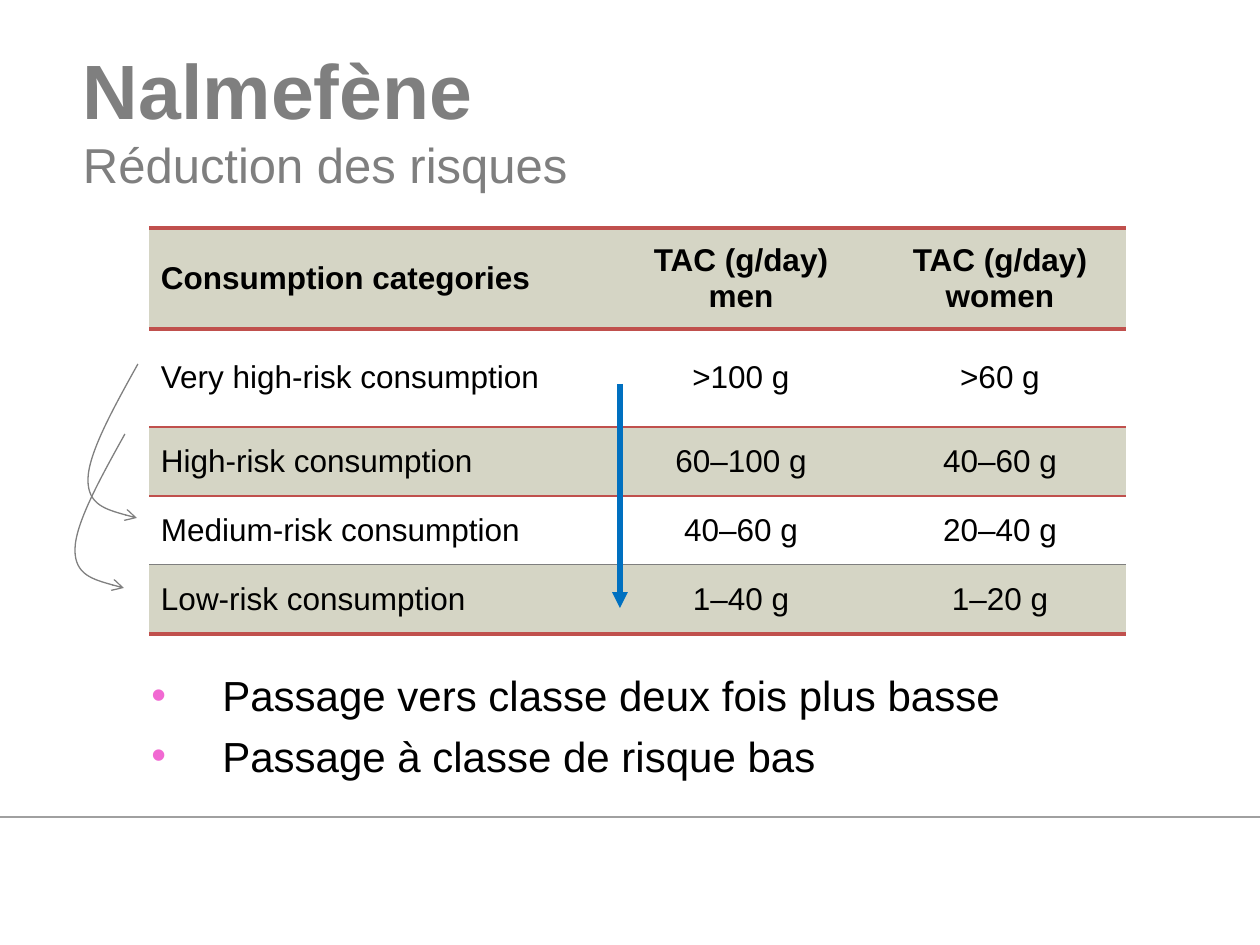
from lxml.etree import SubElement
from pptx import Presentation
from pptx.dml.color import RGBColor
from pptx.enum.shapes import MSO_CONNECTOR as Connector, MSO_SHAPE as Shape
from pptx.enum.text import MSO_ANCHOR as Anchor, PP_ALIGN as Align
from pptx.oxml.ns import qn
from pptx.util import Emu, Pt

COLORS = {
    "title": "7F7F7F", "text": "000000", "band": "D5D5C5", "rule": "C0504D",
    "thin_rule": "7F7F7F", "curve": "808080", "arrow": "0070C0",
    "bullet": "F169D2", "footer": "A0A0A0",
}
FONT = "Arial"
ROWS = [
    ("Consumption categories", "TAC (g/day) men", "TAC (g/day) women"),
    ("Very high-risk consumption", ">100 g", ">60 g"),
    ("High-risk consumption", "60–100 g", "40–60 g"),
    ("Medium-risk consumption", "40–60 g", "20–40 g"),
    ("Low-risk consumption", "1–40 g", "1–20 g"),
]
COLUMN_WIDTHS = [459, 266, 252]
ROW_HEIGHTS = [101, 98, 69, 69, 69]
RULES = [("rule", 2.25), ("rule", 2.25), ("rule", 1), ("rule", 1),
         ("thin_rule", 0.5), ("rule", 2.25)]
BULLETS = ["Passage vers classe deux fois plus basse", "Passage à classe de risque bas"]
CURVE = [(-25, 45), (-50, 90), (-50, 116), (-50, 141), (-25, 148), (-1, 154)]


def px(value):
    """Turn slide pixels into EMU."""
    return Emu(round(value * 914400 / 126))


def color(name):
    """Look up a named colour."""
    return RGBColor.from_string(COLORS[name])


def set_format(target, **values):
    """Set each given attribute on the target."""
    for name, value in values.items():
        setattr(target, name, value)


def set_font(paragraph, size, color_name, bold=False):
    """Style all the text of a paragraph."""
    set_format(paragraph.font, name=FONT, size=Pt(size), bold=bold)
    paragraph.font.color.rgb = color(color_name)


def set_line(shape, color_name, width, tail=None):
    """Style an outline, with an arrowhead at its end if asked."""
    shape.line.color.rgb = color(color_name)
    shape.line.width = Pt(width)
    properties = shape._element.spPr
    if tail:
        SubElement(properties.find(qn("a:ln")), qn("a:tailEnd"), type=tail)


def add_text_frame(slide, box, **values):
    """Add a wrapping text box and return its frame."""
    frame = slide.shapes.add_textbox(*map(px, box)).text_frame
    set_format(frame, word_wrap=True, **values)
    return frame


def add_title(slide, box):
    """Place the title above its subtitle."""
    frame = add_text_frame(slide, box, vertical_anchor=Anchor.MIDDLE, margin_left=0,
                           margin_right=0, margin_top=0, margin_bottom=0)
    title, subtitle = frame.paragraphs[0], frame.add_paragraph()
    title.text, subtitle.text = "Nalmefène", "Réduction des risques"
    set_font(title, 44, "title", bold=True)
    set_font(subtitle, 28, "title")


def set_borders(cell, top, bottom):
    """Rule a cell above and below, leaving its sides open."""
    properties = cell._tc.get_or_add_tcPr()
    for side, rule in (("L", None), ("R", None), ("T", top), ("B", bottom)):
        width = Pt(rule[1]) if rule else 0
        line = SubElement(properties, qn(f"a:ln{side}"), w=str(int(width)))
        if rule:
            fill = SubElement(line, qn("a:solidFill"))
            SubElement(fill, qn("a:srgbClr"), val=COLORS[rule[0]])
        else:
            SubElement(line, qn("a:noFill"))


def add_risk_table(slide, left, top):
    """Place the table of consumption categories."""
    box = (left, top, sum(COLUMN_WIDTHS), sum(ROW_HEIGHTS))
    table = slide.shapes.add_table(len(ROWS), len(COLUMN_WIDTHS), *map(px, box)).table
    set_format(table, first_row=False, horz_banding=False)
    for column, width in zip(table.columns, COLUMN_WIDTHS):
        column.width = px(width)
    for row_index, texts in enumerate(ROWS):
        table.rows[row_index].height = px(ROW_HEIGHTS[row_index])
        for column_index, text in enumerate(texts):
            cell = table.cell(row_index, column_index)
            set_borders(cell, RULES[row_index], RULES[row_index + 1])
            if row_index % 2 == 0:
                cell.fill.solid()
                cell.fill.fore_color.rgb = color("band")
            else:
                cell.fill.background()
            set_format(cell, text=text, vertical_anchor=Anchor.MIDDLE, margin_left=px(12),
                       margin_right=px(12), margin_top=px(9), margin_bottom=px(9))
            paragraph = cell.text_frame.paragraphs[0]
            paragraph.alignment = Align.CENTER if column_index else Align.LEFT
            set_font(paragraph, 18, "text", bold=row_index == 0)


def add_curved_arrow(slide, left, top):
    """Draw a curve that drops two classes from its starting point."""
    builder = slide.shapes.build_freeform(px(left), px(top), scale=1.0)
    builder.add_line_segments([(px(left + x), px(top + y)) for x, y in CURVE], close=False)
    shape = builder.convert_to_shape()
    outline = shape._element.find(".//" + qn("a:path"))
    segments = outline.findall(qn("a:lnTo"))
    for start in range(0, len(segments), 3):
        curve = SubElement(outline, qn("a:cubicBezTo"))
        for segment in segments[start:start + 3]:
            curve.append(segment[0])
            outline.remove(segment)
    shape.fill.background()
    set_line(shape, "curve", 0.75, tail="arrow")
    shape.shadow.inherit = False


def add_down_arrow(slide, x, top, bottom):
    """Draw the thick straight arrow over the table."""
    arrow = slide.shapes.add_connector(Connector.STRAIGHT, *map(px, (x, top, x, bottom)))
    set_line(arrow, "arrow", 3, tail="triangle")
    SubElement(arrow._element.spPr, qn("a:effectLst"))


def add_bullets(slide, box):
    """Place the bulleted list."""
    frame = add_text_frame(slide, box, margin_top=px(12))
    for index, text in enumerate(BULLETS):
        paragraph = frame.add_paragraph() if index else frame.paragraphs[0]
        paragraph.text = text
        properties = paragraph._p.get_or_add_pPr()
        set_format(paragraph, space_before=Pt(5.5 if index else 0))
        properties.set("marL", str(px(71)))
        properties.set("indent", str(px(-71)))
        bullet_color = SubElement(properties, qn("a:buClr"))
        SubElement(bullet_color, qn("a:srgbClr"), val=COLORS["bullet"])
        SubElement(properties, qn("a:buFont"), typeface=FONT)
        SubElement(properties, qn("a:buChar"), char="•")
        set_font(paragraph, 24, "text")


def add_footer(slide, box):
    """Outline the footer band."""
    band = slide.shapes.add_shape(Shape.RECTANGLE, *map(px, box))
    band.fill.background()
    set_line(band, "footer", 0.75)
    band.shadow.inherit = False


def main():
    """Build the slide and save it."""
    presentation = Presentation()
    set_format(presentation, slide_width=px(1260), slide_height=px(945))
    slide = presentation.slides.add_slide(presentation.slide_layouts[6])
    add_footer(slide, (-34, 817, 1312, 150))
    add_risk_table(slide, 149, 228)
    add_curved_arrow(slide, 138, 364)
    add_bullets(slide, (139, 658, 1071, 130))
    add_curved_arrow(slide, 125, 434)
    add_down_arrow(slide, 620, 384, 608)
    add_title(slide, (83, 39, 1114, 158))
    presentation.save("out.pptx")


if __name__ == "__main__":
    main()
